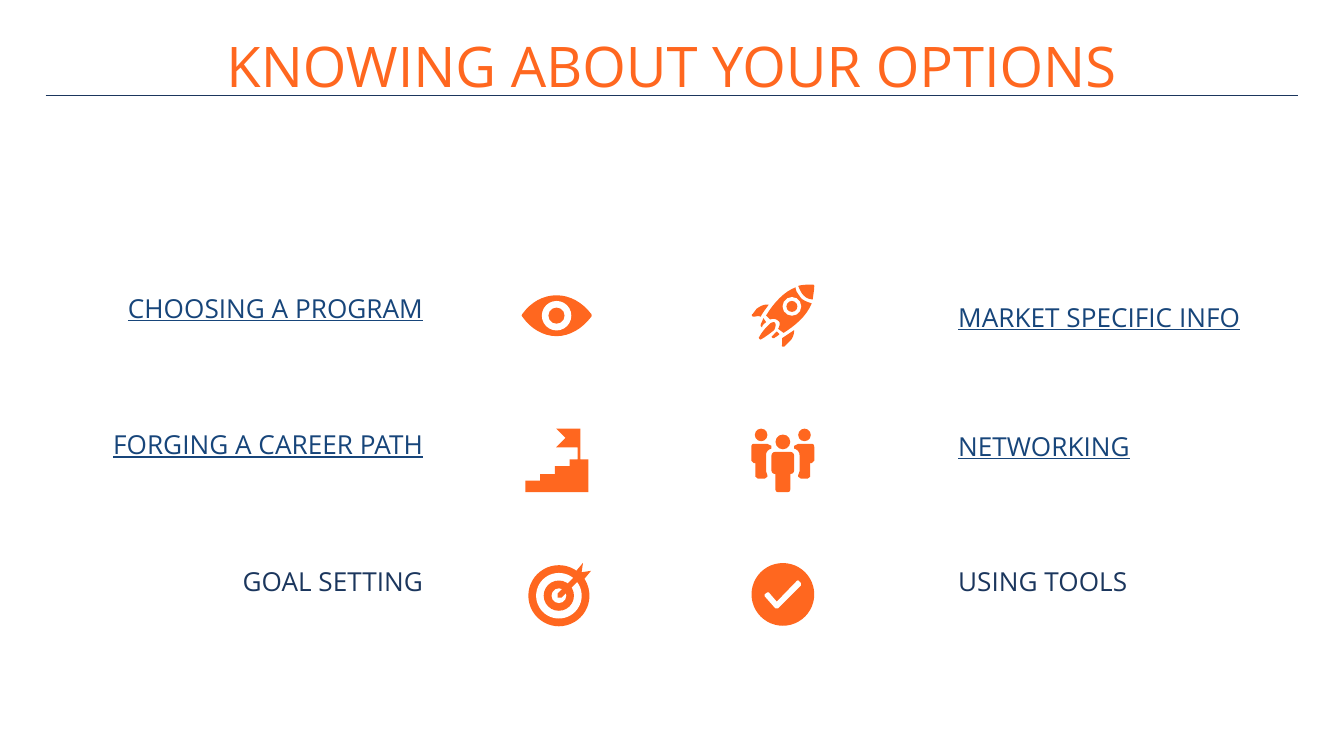
from dataclasses import dataclass

from lxml import etree
from pptx import Presentation
from pptx import util as u
from pptx.dml.color import RGBColor
from pptx.enum import shapes, text
from pptx.oxml.ns import qn

Cm = u.Cm
KIND = shapes.MSO_SHAPE
ALIGN = text.PP_ALIGN
ANCHOR = text.MSO_ANCHOR


@dataclass(frozen=True)
class Theme:
    """Colours, font and type sizes."""
    accent: str = "FF671F"
    navy: str = "1B365D"
    link: str = "17457A"
    paper: str = "FFFFFF"
    font: str = "Open Sans"
    head: int = 30
    label: int = 14


THEME = Theme()


def rgb(code):
    """Turn a hex code into a colour."""
    return RGBColor.from_string(code)


def place(shape, box):
    """Move a shape to a box given in centimetres."""
    shape.left, shape.top, shape.width, shape.height = map(Cm, box)


def write(shape, words, size, color, align, anchor, under=None):
    """Fill a shape with one formatted line of text."""
    frame = shape.text_frame
    frame.word_wrap = True
    frame.auto_size = text.MSO_AUTO_SIZE.NONE
    frame.vertical_anchor = anchor
    frame.margin_left = frame.margin_right = Cm(0.25)
    frame.margin_top = frame.margin_bottom = Cm(0.25)
    para = frame.paragraphs[0]
    para.alignment = align
    para.line_spacing = 0.9
    run = para.add_run()
    run.text = words
    font = run.font
    font.name, font.size, font.underline = THEME.font, u.Pt(size), under
    font.color.rgb = rgb(color)


def trace(steps, count=8):
    """Flatten points and cubic curves into a list of points."""
    dots = []
    for step in steps:
        if len(step) == 2:
            dots.append(step)
            continue
        knots = [dots[-1], step[:2], step[2:4], step[4:]]
        for i in range(1, count + 1):
            t = i / count
            rates = ((1 - t) ** 3, 3 * t * (1 - t) ** 2, 3 * t * t * (1 - t), t ** 3)
            dots.append(tuple(sum(r * k[axis] for r, k in zip(rates, knots))
                              for axis in (0, 1)))
    return dots


class Pen:
    """Draws the pieces of an icon on a grid of 47 units per box side."""

    def __init__(self, slide, left, top, side):
        self.group = slide.shapes.add_group_shape()
        self.left, self.top, self.unit = Cm(left), Cm(top), Cm(side) / 47

    def spot(self, x, y):
        """Map grid units to a slide position."""
        return round(self.left + x * self.unit), round(self.top + y * self.unit)

    def paint(self, shape, color):
        """Give a shape a plain fill and no line."""
        shape.shadow.inherit = False
        shape.fill.solid()
        shape.fill.fore_color.rgb = rgb(color)
        shape.line.fill.background()

    def block(self, kind, x, y, wide, high, color=THEME.accent):
        """Draw a preset shape."""
        size = round(wide * self.unit), round(high * self.unit)
        shape = self.group.shapes.add_shape(kind, *self.spot(x, y), *size)
        self.paint(shape, color)

    def disc(self, x, y, radius, color=THEME.accent):
        """Draw a circle around a centre."""
        self.block(KIND.OVAL, x - radius, y - radius, 2 * radius, 2 * radius, color)

    def rings(self, x, y, *radii):
        """Draw nested circles in alternating colours."""
        for i, radius in enumerate(radii):
            self.disc(x, y, radius, (THEME.accent, THEME.paper)[i % 2])

    def form(self, steps, color=THEME.accent):
        """Draw a closed outline."""
        dots = [self.spot(*dot) for dot in trace(steps)]
        build = self.group.shapes.build_freeform(*dots[0], scale=1.0)
        build.add_line_segments(dots[1:], close=True)
        self.paint(build.convert_to_shape(), color)


def eye(pen):
    """Draw an open eye."""
    pen.form([(26, 8), (36, 8, 45, 13, 52, 22), (52.3, 23), (52, 24),
              (45, 33, 36, 38.5, 26, 38.5), (16, 38.5, 7, 33, 0.5, 24),
              (0, 23), (0.5, 22), (7, 13, 16, 8, 26, 8)])
    pen.disc(26, 23.2, 11, THEME.paper)
    pen.disc(26, 23.2, 6)


def stairs(pen):
    """Draw a flag on top of a stair."""
    pen.form([(23, 0), (30, 7), (23, 14), (39, 14), (39, 23), (33, 23), (33, 28),
              (22, 28), (22, 34), (11, 34), (11, 39), (0, 39), (0, 47.5),
              (47, 47.5), (47, 23), (41, 23), (41, 0)])


def target(pen):
    """Draw an arrow in a target."""
    pen.rings(23, 24.5, 22.8, 17, 11.3, 5.5)
    pen.form([(22, 23), (34, 11), (36, 6), (41, 0), (40, 7), (47, 6),
              (42, 12), (37, 14), (25, 26), (22, 26)])


def rocket(pen):
    """Draw a rocket in flight."""
    pen.form([(9, 25), (8, 28, 7, 29, 7, 30), (7, 31), (8, 32),
              (8, 30, 10, 29, 11, 28)])
    pen.form([(19, 35), (17, 37, 16, 38, 15, 39), (16, 40), (17, 40),
              (18, 39, 19, 39, 21, 37)])
    pen.form([(17, 28), (15, 28, 14, 29, 13, 30), (9, 34, 7, 37, 6, 39),
              (5, 39, 6, 41, 7, 41), (9, 40, 12, 38, 17, 34),
              (18, 32, 19, 29, 17, 28)])
    pen.form([(11, 15), (9, 15, 7, 16, 4, 18), (1, 22), (0, 22, 0, 24, 2, 24),
              (3, 24, 5, 23, 7, 24), (9, 20, 11, 18, 13, 15)])
    pen.form([(32, 34), (29, 36, 26, 38, 23, 40), (23, 41, 23, 42, 23, 45),
              (22, 46, 24, 47, 25, 46), (29, 42), (32, 39, 32, 35, 32, 34)])
    pen.form([(35, 1), (36, 3, 37, 6, 39, 8), (41, 10, 43, 11, 46, 11),
              (46, 8, 47, 5, 47, 1), (47, 0, 46, 0, 45, 0), (42, 0, 38, 0, 35, 1)])
    pen.form([(33, 2), (25, 5, 17, 13, 11, 23), (14, 26), (17, 25, 19, 26, 20, 27),
              (22, 28, 21, 31, 20, 33), (24, 36), (32, 31, 41, 24, 45, 14),
              (42, 13, 39, 12, 37, 10), (35, 7, 33, 5, 33, 2)])
    pen.disc(30.3, 16.3, 7, THEME.paper)
    pen.disc(30.3, 16.3, 4.1)


def people(pen):
    """Draw a team of three."""
    side = [(2, 11.5), (12, 11.5), (15, 13), (15, 15), (12, 16, 11, 18, 11, 20),
            (11, 32), (12, 35), (12, 36), (10, 37.5), (5, 37.5), (3, 36), (3, 26),
            (2, 26), (0, 24), (0, 14), (0, 12, 1, 11.5, 2, 11.5)]
    pen.form(side)
    pen.form([(47 - x, y) for x, y in trace(side)])
    for x, y, radius in ((7.3, 4.8, 4.7), (39.7, 4.8, 4.7), (23.5, 10, 5.5)):
        pen.disc(x, y, radius)
    pen.block(KIND.ROUNDED_RECTANGLE, 15, 17.5, 17, 16.5)
    pen.block(KIND.ROUNDED_RECTANGLE, 18, 28, 11, 19.5)


def check(pen):
    """Draw a tick on a disc."""
    pen.disc(23.5, 23.5, 23.4)
    pen.form([(35, 13), (37, 15), (37, 17), (20, 34), (18, 34), (10, 25),
              (10, 23.5), (12, 22), (13, 22), (19, 29), (34, 13.5)], THEME.paper)


def header(slide, box):
    """Place the title and the rule under it."""
    title = slide.shapes.title
    place(title, box)
    write(title, "KNOWING ABOUT YOUR OPTIONS", THEME.head, THEME.accent,
          ALIGN.CENTER, ANCHOR.MIDDLE)
    left, top, wide, _ = box
    y = Cm(top + 1.8)
    rule = slide.shapes.add_connector(shapes.MSO_CONNECTOR.STRAIGHT,
                                      Cm(left), y, Cm(left + wide), y)
    rule.line.color.rgb = rgb(THEME.navy)
    rule.line.width = u.Pt(0.75)
    etree.SubElement(rule.element.spPr, qn("a:effectLst"))


def label(slide, box, words, align, linked):
    """Place one option name."""
    area = slide.shapes.add_textbox(*map(Cm, box))
    color = THEME.link if linked else THEME.navy
    write(area, words, THEME.label, color, align, ANCHOR.BOTTOM, linked or None)


def column(slide, left, wide, align, rows):
    """Place one column of option names with their icons."""
    for row, (words, top, draw, x) in enumerate(rows):
        label(slide, (left, top, wide, 0.55), words, align, row < 2)
        draw(Pen(slide, x, (5.38, 8.1, 10.64)[row], 1.19))


def main():
    """Build the slide."""
    deck = Presentation()
    deck.slide_width, deck.slide_height = Cm(25.4), Cm(14.29)
    slide = deck.slides.add_slide(deck.slide_layouts[5])
    header(slide, (0.86, 0, 23.67, 2.64))
    column(slide, 0.48, 7.77, ALIGN.RIGHT, [
        ("CHOOSING A PROGRAM", 5.82, eye, 9.86),
        ("FORGING A CAREER PATH", 8.4, stairs, 9.93),
        ("GOAL SETTING", 10.98, target, 9.98)])
    column(slide, 17.86, 6.68, ALIGN.LEFT, [
        ("MARKET SPECIFIC INFO", 5.99, rocket, 14.2),
        ("NETWORKING", 8.43, people, 14.2),
        ("USING TOOLS", 10.98, check, 14.2)])
    deck.save("out.pptx")


if __name__ == "__main__":
    main()
